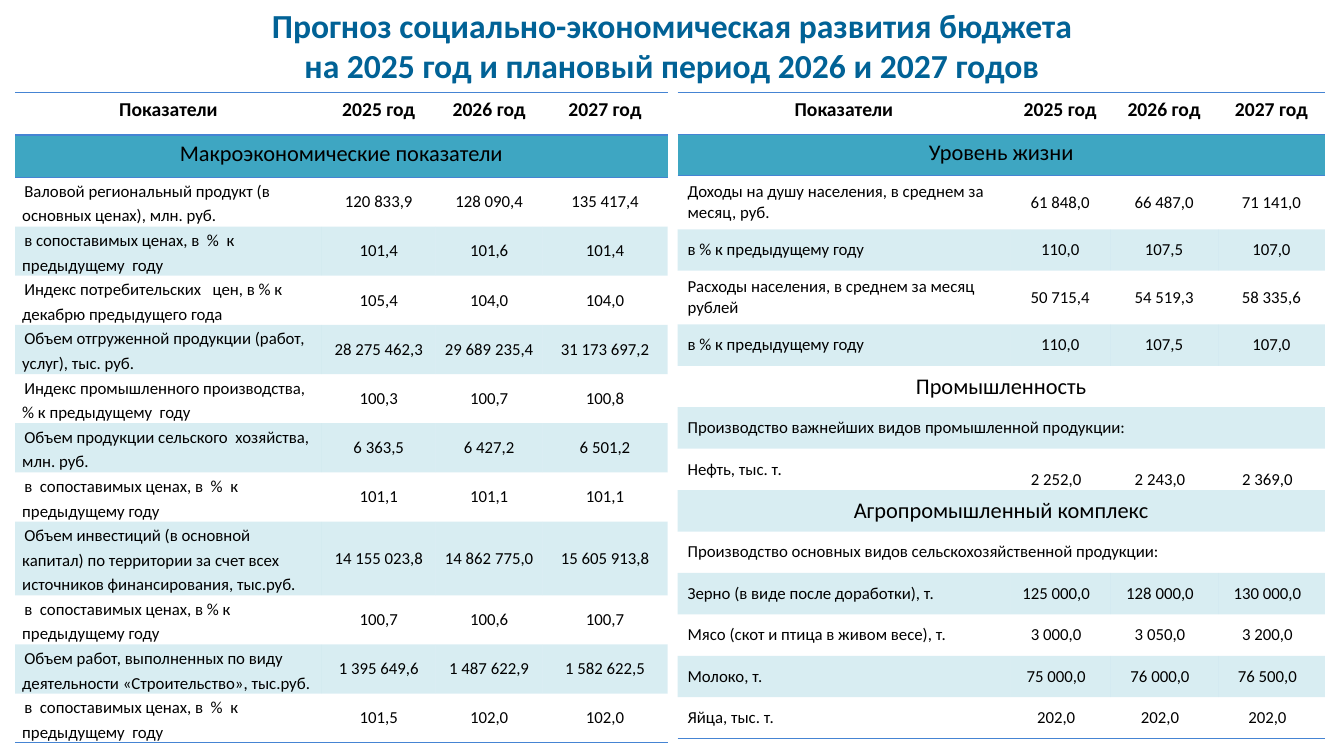
"""Build a slide with two tables of a regional budget forecast."""
from lxml.etree import SubElement
from pptx import Presentation
from pptx.dml.color import RGBColor
from pptx.enum.text import MSO_ANCHOR, PP_ALIGN
from pptx.oxml.ns import qn
from pptx.util import Inches, Pt

WIDE, HIGH = Inches(13.33), Inches(7.5)
HUES = {"title": "016296", "text": "000000", "band": "3EA6C2", "line": "4584D3"}
PLAIN = "{2D5ABB26-0587-4C30-8999-92F81FD0307C}"
MID, LOW, TOP = MSO_ANCHOR.MIDDLE, MSO_ANCHOR.BOTTOM, MSO_ANCHOR.TOP
FONTS = {
    "title": {"size": Pt(24), "bold": True},
    "head": {"size": Pt(14), "bold": True},
    "part": {"size": Pt(16), "bold": False},
    "body": {"size": Pt(12), "bold": False},
}
TIGHT = {"margin_left": Inches(0.07), "margin_right": Inches(0.07),
         "margin_top": 0, "margin_bottom": 0}
SHIFT = {"margin_right": Inches(0.15)}
TITLE = ("Прогноз социально-экономическая развития бюджета",
         "на 2025 год и плановый период 2026 и 2027 годов")
HEAD = ("Показатели", "2025 год", "2026 год", "2027 год")

MACRO = {
    "left": 1.13, "high": 85.33, "cols": (22.81, 8.48, 7.95, 9.3),
    "fixed": {0: 5.6, 1: 5.6, 9: 9.73}, "dense": True, "oil": 99,
    "rows": (
        HEAD,
        ("Макроэкономические показатели",),
        ("Валовой региональный продукт (в основных ценах), млн. руб.",
         "120 833,9", "128 090,4", "135 417,4"),
        ("в сопоставимых ценах, в  %  к  предыдущему  году", "101,4", "101,6", "101,4"),
        ("Индекс потребительских   цен, в % к декабрю предыдущего года",
         "105,4", "104,0", "104,0"),
        ("Объем отгруженной продукции (работ, услуг), тыс. руб.",
         "28 275 462,3", "29 689 235,4", "31 173 697,2"),
        ("Индекс промышленного производства, % к предыдущему  году",
         "100,3", "100,7", "100,8"),
        ("Объем продукции сельского  хозяйства, млн. руб.",
         "6 363,5", "6 427,2", "6 501,2"),
        ("в  сопоставимых ценах, в  %  к  предыдущему году", "101,1", "101,1", "101,1"),
        ("Объем инвестиций (в основной   капитал) по территории за счет всех "
         "источников финансирования, тыс.руб.",
         "14 155 023,8", "14 862 775,0", "15 605 913,8"),
        ("в  сопоставимых ценах, в % к предыдущему году", "100,7", "100,6", "100,7"),
        ("Объем работ, выполненных по виду деятельности «Строительство», тыс.руб.",
         "1 395 649,6", "1 487 622,9", "1 582 622,5"),
        ("в  сопоставимых ценах, в  %  к  предыдущему  году", "101,5", "102,0", "102,0"),
    ),
}
LIFE = {
    "left": 50.41, "high": 85.47, "cols": (24.76, 7.43, 8.03, 7.95),
    "fixed": {2: 7.1, 4: 7.1}, "dense": False, "oil": 8,
    "rows": (
        HEAD,
        ("Уровень жизни",),
        ("Доходы на душу населения, в среднем за месяц, руб.",
         "61 848,0", "66 487,0", "71 141,0"),
        ("в % к предыдущему году", "110,0", "107,5", "107,0"),
        ("Расходы населения, в среднем за месяц рублей",
         "50 715,4", "54 519,3", "58 335,6"),
        ("в % к предыдущему году", "110,0", "107,5", "107,0"),
        ("Промышленность",),
        ("Производство важнейших видов промышленной продукции:",),
        ("Нефть, тыс. т.", "2 252,0", "2 243,0", "2 369,0"),
        ("Агропромышленный комплекс",),
        ("Производство основных видов сельскохозяйственной продукции:",),
        ("Зерно (в виде после доработки), т.", "125 000,0", "128 000,0", "130 000,0"),
        ("Мясо (скот и птица в живом весе), т.", "3 000,0", "3 050,0", "3 200,0"),
        ("Молоко, т.", "75 000,0", "76 000,0", "76 500,0"),
        ("Яйца, тыс. т.", "202,0", "202,0", "202,0"),
    ),
}


def across(share):
    """Turn a percentage of the slide width into a length."""
    return int(WIDE * share / 100)


def down(share):
    """Turn a percentage of the slide height into a length."""
    return int(HIGH * share / 100)


def apply(item, looks):
    """Set each named format value on an item."""
    for name, value in looks.items():
        setattr(item, name, value)


def write(para, text, kind, hue="text", align=PP_ALIGN.CENTER):
    """Put one formatted run into a paragraph."""
    para.alignment = align
    run = para.add_run()
    run.text = text
    apply(run.font, {"name": "Calibri", **FONTS[kind]})
    run.font.color.rgb = RGBColor.from_string(HUES[hue])


def rule(cell, sides):
    """Draw border lines on the given sides of a cell."""
    props = cell._tc.get_or_add_tcPr()
    for side in sides:
        line = SubElement(props, qn("a:ln" + side), w=str(Pt(1)))
        fill = SubElement(line, qn("a:solidFill"))
        SubElement(fill, qn("a:srgbClr"), val=HUES["line"])


def shade(cell, band):
    """Fill a banded cell with a faint tint and leave others clear."""
    if not band:
        cell.fill.background()
        return
    cell.fill.solid()
    cell.fill.fore_color.rgb = RGBColor.from_string(HUES["band"])
    tint = cell._tc.tcPr.find(".//" + qn("a:srgbClr"))
    SubElement(tint, qn("a:alpha"), val="20000")


def fill_cell(cell, text, row, col, plan):
    """Write a cell according to its role in the table."""
    para = cell.text_frame.paragraphs[0]
    lone = len(plan["rows"][row]) == 1
    cell.vertical_anchor = TOP if row < 2 else MID
    if row == 0:
        write(para, text, "head")
    elif lone and not text.endswith(":"):
        write(para, text, "part")
    elif col == 0:
        write(para, text, "body", align=PP_ALIGN.LEFT)
        if plan["dense"]:
            apply(cell, TIGHT)
            para.line_spacing = 1.2
            para._p.get_or_add_pPr().set("indent", str(Inches(0.02)))
    else:
        write(para, text, "body")
        apply(cell, TIGHT)
        if row >= plan["oil"]:
            apply(cell, SHIFT)
        if row == plan["oil"]:
            cell.vertical_anchor = LOW


def add_grid(slide, plan):
    """Add one forecast table with bands, rules and spans."""
    rows, cols, fixed = plan["rows"], plan["cols"], plan["fixed"]
    frame = slide.shapes.add_table(
        len(rows), len(cols), across(plan["left"]), down(12.27),
        across(sum(cols)), down(plan["high"]))
    table = frame.table
    apply(table, {"first_row": False, "horz_banding": False})
    table._tbl.tblPr.find(qn("a:tableStyleId")).text = PLAIN
    for col, share in enumerate(cols):
        table.columns[col].width = across(share)
    rest = (plan["high"] - sum(fixed.values())) / (len(rows) - len(fixed))
    sides = {0: "TB", 1: "T", len(rows) - 1: "B"}
    for row, texts in enumerate(rows):
        table.rows[row].height = down(fixed.get(row, rest))
        if len(texts) == 1:
            table.cell(row, 0).merge(table.cell(row, len(cols) - 1))
        for col in range(len(cols)):
            cell = table.cell(row, col)
            rule(cell, sides.get(row, ""))
            shade(cell, row % 2)
            if col < len(texts):
                fill_cell(cell, texts[col], row, col, plan)


def add_title(slide):
    """Add the two-line heading."""
    box = slide.shapes.add_textbox(across(19.2), 0, across(61.6), down(12.1))
    frame = box.text_frame
    frame.word_wrap = False
    write(frame.paragraphs[0], TITLE[0], "title", "title")
    write(frame.add_paragraph(), TITLE[1], "title", "title")


def main():
    """Build and save the slide."""
    deck = Presentation()
    apply(deck, {"slide_width": WIDE, "slide_height": HIGH})
    slide = deck.slides.add_slide(deck.slide_layouts[6])
    add_grid(slide, MACRO)
    add_title(slide)
    add_grid(slide, LIFE)
    deck.save("out.pptx")


if __name__ == "__main__":
    main()
